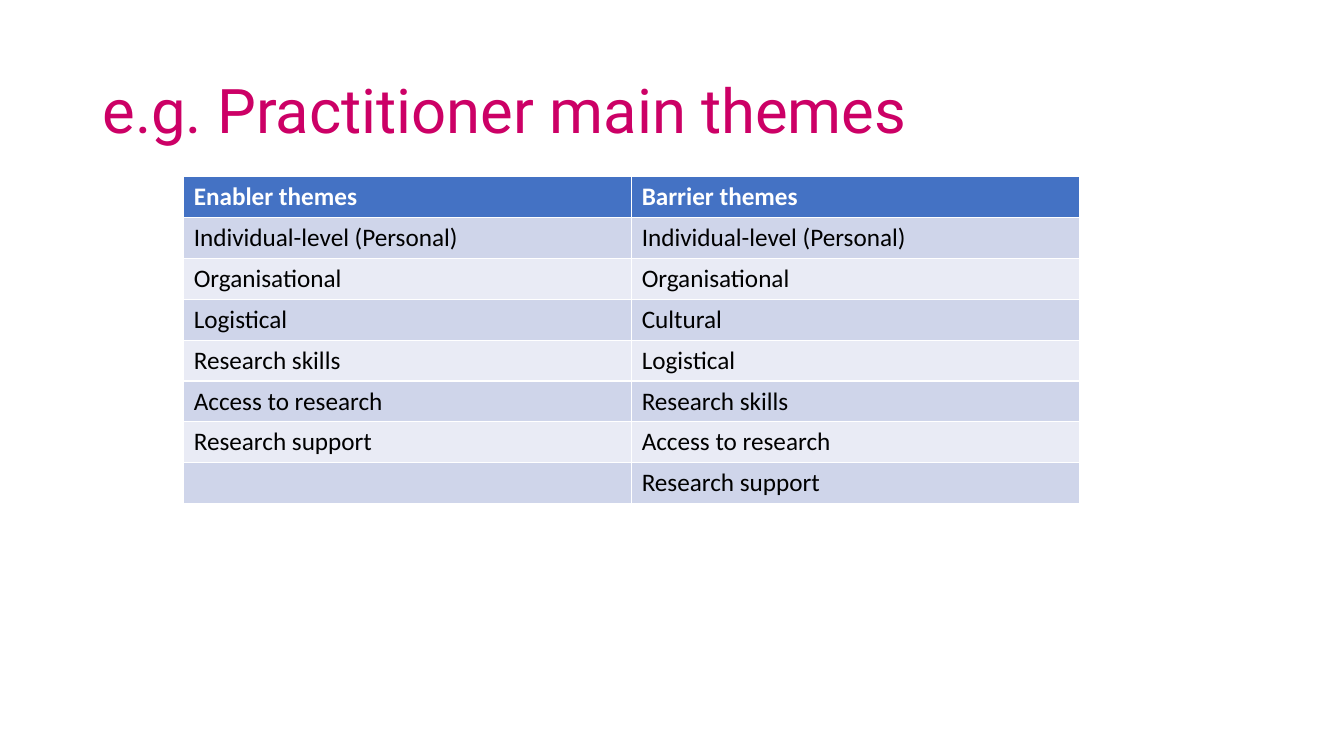
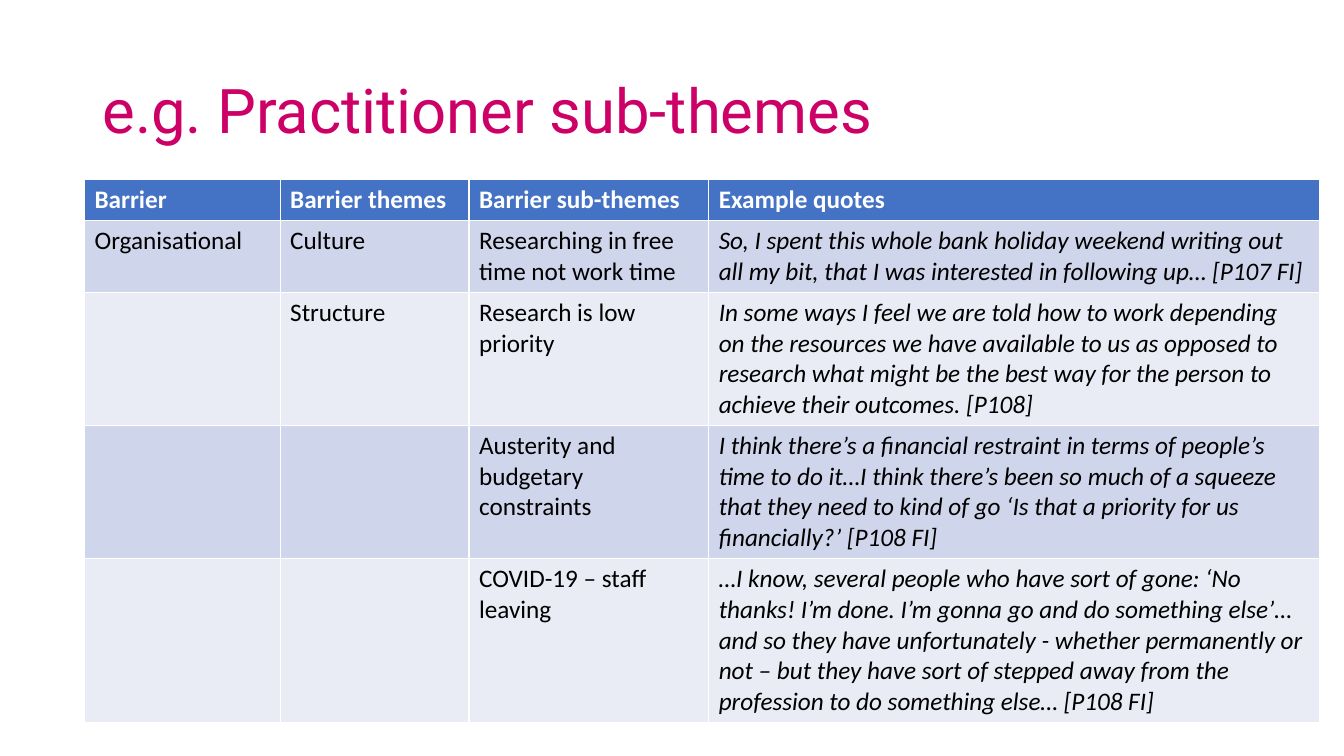
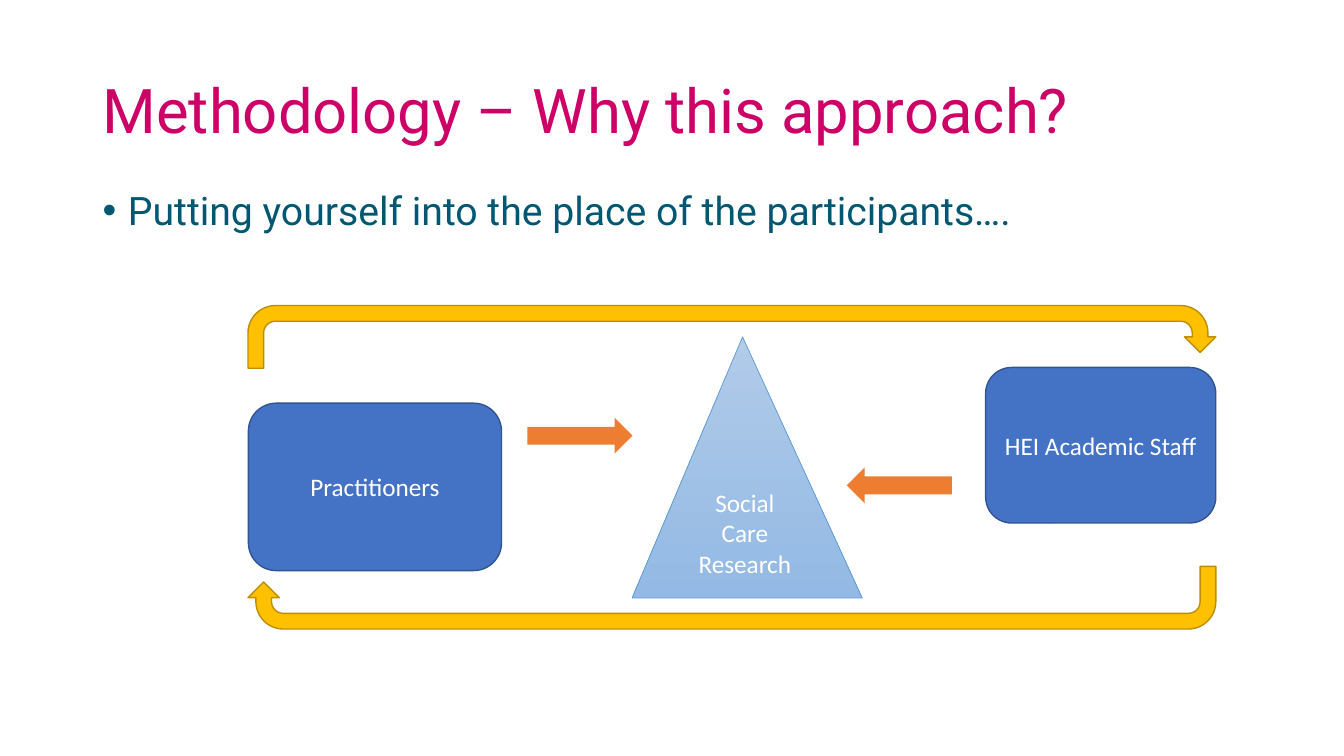
from dataclasses import dataclass

from pptx import Presentation
from pptx import util as u
from pptx.dml.color import RGBColor
from pptx.enum import shapes, text


@dataclass(frozen=True)
class Theme:
    title_font: str = "Roboto"
    text_font: str = "Calibri"
    title_size: int = 44
    list_size: int = 28
    text_size: int = 18
    title: str = "CC0066"
    list: str = "005772"
    white: str = "FFFFFF"
    black: str = "000000"
    blue: str = "4472C4"
    blue_line: str = "325491"
    odd_row: str = "CFD5EA"
    even_row: str = "E9EBF5"
    orange: str = "ED7D31"
    gold: str = "FFC000"
    gold_line: str = "BD8E00"
    sky: tuple = ("B1CBE9", "93B9E4")
    sky_line: str = "5B9BD5"


def rgb(code):
    return RGBColor.from_string(code)


def box(left, top, width, height):
    return [u.Cm(v) for v in (left, top, width, height)]


class Deck:
    def __init__(self, theme):
        self.theme = theme
        self.prs = Presentation()
        self.prs.slide_width, self.prs.slide_height = u.Cm(33.87), u.Cm(19.05)
        self.s = None

    def font(self, p, name, size, color, bold=False, italic=False):
        p.font.name, p.font.size = name, u.Pt(size)
        p.font.color.rgb = rgb(color)
        p.font.bold, p.font.italic = bold, italic

    def place(self, sp, bounds):
        sp.left, sp.top, sp.width, sp.height = box(*bounds)

    def slide(self, title, layout=5):
        t = self.theme
        self.s = self.prs.slides.add_slide(self.prs.slide_layouts[layout])
        sp = self.s.shapes.title
        self.place(sp, (2.33, 1.01, 29.21, 3.68))
        tf = sp.text_frame
        tf.text = title
        tf.vertical_anchor = text.MSO_ANCHOR.MIDDLE
        p = tf.paragraphs[0]
        p.alignment = text.PP_ALIGN.LEFT
        p.line_spacing = 0.9
        self.font(p, t.title_font, t.title_size, t.title)

    def bullets(self, items):
        t = self.theme
        sp = self.s.placeholders[1]
        self.place(sp, (2.33, 4.69, 29.21, 9.99))
        tf = sp.text_frame
        tf.text = "\n".join(items)
        for p in tf.paragraphs:
            p.line_spacing = 0.9
            p.space_before, p.space_after = u.Pt(0), u.Pt(12)
            pPr = p._p.get_or_add_pPr()
            indent = u.Cm(0.64)
            pPr.set("marL", str(indent))
            pPr.set("indent", str(-indent))
            self.font(p, t.title_font, t.list_size, t.list)

    def table(self, left, top, widths, rows, lines, italic_col=None):
        t = self.theme
        heights = [0.26 + 0.77 * n for n in lines]
        bounds = box(left, top, sum(widths), sum(heights))
        tbl = self.s.shapes.add_table(len(rows), len(widths), *bounds).table
        for col, width in zip(tbl.columns, widths):
            col.width = u.Cm(width)
        for i, (row, height) in enumerate(zip(rows, heights)):
            tbl.rows[i].height = u.Cm(height)
            head = i == 0
            fill = t.blue if head else (t.odd_row if i % 2 else t.even_row)
            for j, value in enumerate(row):
                cell = tbl.cell(i, j)
                cell.fill.solid()
                cell.fill.fore_color.rgb = rgb(fill)
                cell.text = value
                self.font(cell.text_frame.paragraphs[0], t.text_font, t.text_size,
                          t.white if head else t.black, head,
                          not head and j == italic_col)

    def shape(self, kind, bounds, fill, line=None, label="", weight=1, rotation=0):
        t = self.theme
        sp = self.s.shapes.add_shape(kind, *box(*bounds))
        sp.shadow.inherit = False
        sp.rotation = rotation
        if isinstance(fill, tuple):
            sp.fill.gradient()
            sp.fill.gradient_angle = 270
            for stop, color in zip(sp.fill.gradient_stops, fill):
                stop.color.rgb = rgb(color)
        else:
            sp.fill.solid()
            sp.fill.fore_color.rgb = rgb(fill)
        if line:
            sp.line.color.rgb = rgb(line)
            sp.line.width = u.Pt(weight)
        else:
            sp.line.fill.background()
        if label:
            tf = sp.text_frame
            tf.text = label
            tf.word_wrap = True
            tf.vertical_anchor = text.MSO_ANCHOR.MIDDLE
            for p in tf.paragraphs:
                p.alignment = text.PP_ALIGN.CENTER
                self.font(p, t.text_font, t.text_size, t.white)
        return sp


def main_themes(deck):
    deck.slide("e.g. Practitioner main themes")
    rows = [
        ("Enabler themes", "Barrier themes"),
        ("Individual-level (Personal)", "Individual-level (Personal)"),
        ("Organisational", "Organisational"),
        ("Logistical", "Cultural"),
        ("Research skills", "Logistical"),
        ("Access to research", "Research skills"),
        ("Research support", "Access to research"),
        ("", "Research support"),
    ]
    deck.table(4.63, 4.45, [11.29, 11.29], rows, [1] * len(rows))


def sub_themes(deck):
    deck.slide("e.g. Practitioner sub-themes")
    rows = [
        ("Barrier", "Barrier themes", "Barrier sub-themes", "Example quotes"),
        ("Organisational", "Culture", "Researching in free time not work time",
         "So, I spent this whole bank holiday weekend writing out all my bit, "
         "that I was interested in following up… [P107 FI]"),
        ("", "Structure", "Research is low priority",
         "In some ways I feel we are told how to work depending on the resources "
         "we have available to us as opposed to research what might be the best "
         "way for the person to achieve their outcomes. [P108]"),
        ("", "", "Austerity and budgetary constraints",
         "I think there’s a financial restraint in terms of people’s time to do "
         "it…I think there’s been so much of a squeeze that they need to kind of "
         "go ‘Is that a priority for us financially?’ [P108 FI]"),
        ("", "", "COVID-19 – staff leaving",
         "…I know, several people who have sort of gone: ‘No thanks! I’m done. "
         "I’m gonna go and do something else’…and so they have unfortunately - "
         "whether permanently or not – but they have sort of stepped away from "
         "the profession to do something else… [P108 FI]"),
    ]
    deck.table(2.13, 4.53, [4.93, 4.76, 6.04, 15.39], rows, [1, 2, 4, 4, 5],
               italic_col=3)


def methodology(deck):
    t, kinds = deck.theme, shapes.MSO_SHAPE
    deck.slide("Methodology – Why this approach?", layout=1)
    deck.bullets(["Putting yourself into the place of the participants…."])
    for label, bounds in (("Practitioners", (6.26, 10.16, 6.38, 4.22)),
                          ("HEI Academic Staff", (24.84, 9.26, 5.8, 3.92))):
        deck.shape(kinds.ROUNDED_RECTANGLE, bounds, t.blue, t.blue_line, label)
    triangle = deck.shape(kinds.ISOSCELES_TRIANGLE, (15.93, 8.49, 5.8, 6.58), t.sky,
                          t.sky_line, "Social\nCare\nResearch", weight=0.5)
    triangle.adjustments[0] = 0.48
    for left, top, rotation in ((13.29, 10.53, 0), (21.34, 11.78, 180)):
        deck.shape(kinds.RIGHT_ARROW, (left, top, 2.65, 0.9), t.orange,
                   rotation=rotation)
    for top, rotation in ((7.7, 0), (14.27, 180)):
        deck.shape(kinds.U_TURN_ARROW, (6.25, top, 24.39, 1.58), t.gold,
                   t.gold_line, rotation=rotation)


def main():
    deck = Deck(Theme())
    main_themes(deck)
    sub_themes(deck)
    methodology(deck)
    deck.prs.save("out.pptx")


if __name__ == "__main__":
    main()
